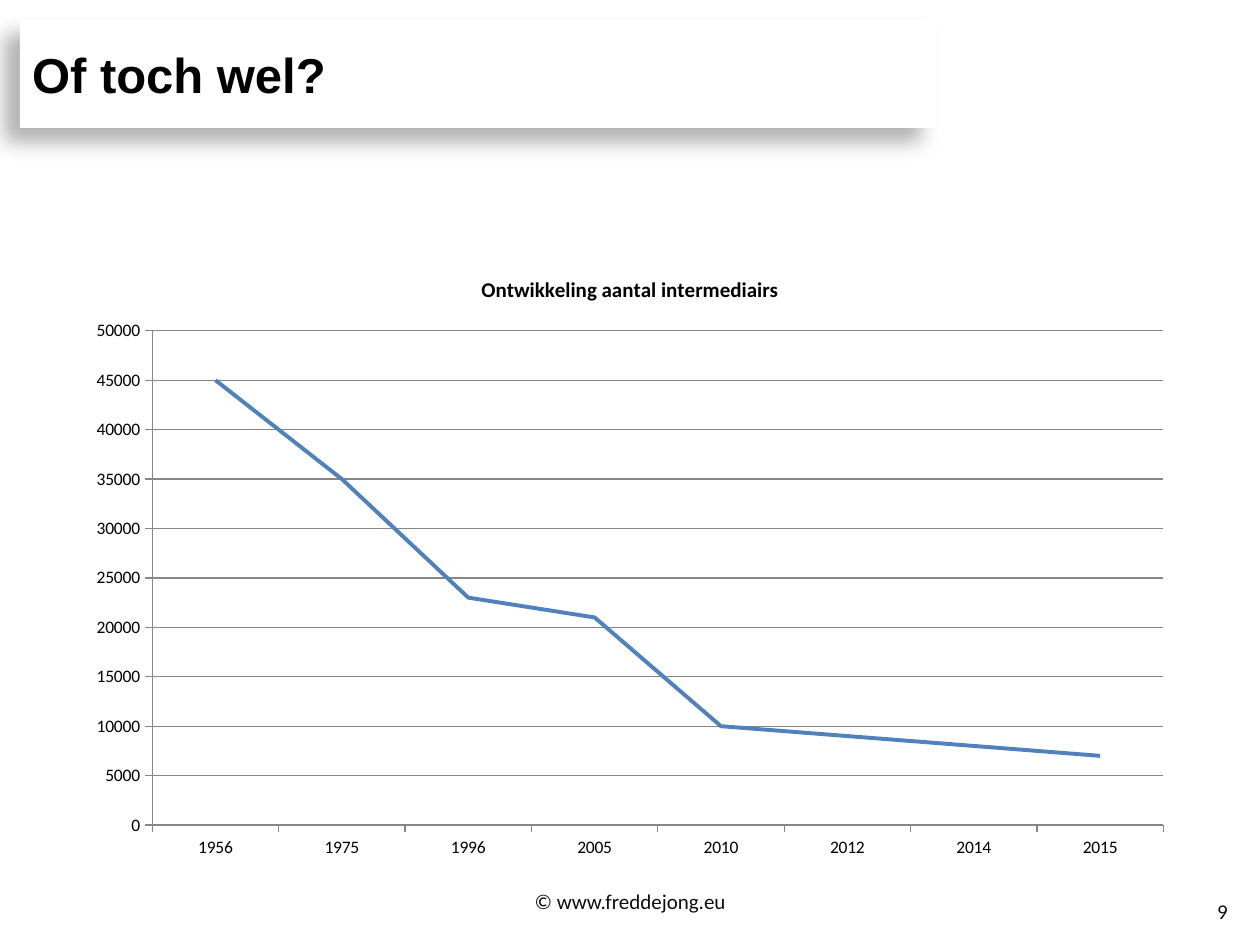
from lxml.etree import SubElement
from pptx import Presentation
from pptx.chart.data import CategoryChartData
from pptx.dml.color import RGBColor
from pptx.enum.chart import XL_CHART_TYPE as ChartType, XL_MARKER_STYLE as Marker, XL_TICK_MARK as Tick
from pptx.enum.shapes import MSO_SHAPE as Shape
from pptx.enum.text import MSO_ANCHOR as Anchor, PP_ALIGN as Align
from pptx.oxml.ns import qn
from pptx.util import Cm, Pt


def color(hex_code):
    return RGBColor.from_string(hex_code)


class SlideBuilder:
    heading_font = "Arial"
    body_font = "Calibri"
    black = "000000"
    white = "FFFFFF"
    footer_color = "0D0D0D"
    line_color = "4F81BD"
    grid_color = "868686"

    def __init__(self, slide):
        self.slide = slide

    def style(self, font, name, size, hex_code, bold=False):
        font.name = name
        font.size = Pt(size)
        font.bold = bold
        font.color.rgb = color(hex_code)

    def set_text(self, frame, text, align, name, size, hex_code, bold=False):
        frame.word_wrap = True
        frame.vertical_anchor = Anchor.MIDDLE
        frame.text = text
        paragraph = frame.paragraphs[0]
        paragraph.alignment = align
        self.style(paragraph.runs[0].font, name, size, hex_code, bold)

    def add_shadow(self, shape):
        shape.shadow.inherit = False
        effects = shape._element.spPr.find(qn("a:effectLst"))
        shadow = SubElement(effects, qn("a:outerShdw"), blurRad=str(Pt(12)),
                            dist=str(Pt(12)), dir=str(140 * 60000),
                            algn="ctr", rotWithShape="0")
        tint = SubElement(shadow, qn("a:srgbClr"), val=self.black)
        SubElement(tint, qn("a:alpha"), val="30000")

    def heading(self, text, left, top, width, height):
        banner = self.slide.shapes.add_shape(
            Shape.RECTANGLE, Cm(left), Cm(top), Cm(width), Cm(height))
        banner.fill.solid()
        banner.fill.fore_color.rgb = color(self.white)
        banner.line.fill.background()
        self.add_shadow(banner)
        self.set_text(banner.text_frame, text, Align.LEFT,
                      self.heading_font, 28, self.black, True)

    def footer(self, text, align, left, top, width, height):
        box = self.slide.shapes.add_textbox(Cm(left), Cm(top), Cm(width), Cm(height))
        self.set_text(box.text_frame, text, align, self.body_font, 12, self.footer_color)

    def line_chart(self, title, counts, left, top, width, height):
        data = CategoryChartData(number_format="General")
        data.categories = list(counts)
        data.add_series(title, list(counts.values()))
        chart = self.slide.shapes.add_chart(
            ChartType.LINE, Cm(left), Cm(top), Cm(width), Cm(height), data).chart
        self.style(chart.font, self.body_font, 10, self.black)
        chart.has_legend = False
        chart.has_title = True
        chart.chart_title.include_in_layout = False
        heading = chart.chart_title.text_frame
        heading.text = title
        self.style(heading.paragraphs[0].runs[0].font, self.body_font, 12, self.black, True)

        years, amounts = chart.category_axis, chart.value_axis
        years.has_major_gridlines = False
        amounts.has_major_gridlines = True
        amounts.minimum_scale = 0
        amounts.maximum_scale = 50000
        amounts.major_unit = 5000
        for axis in (years, amounts):
            axis.major_tick_mark = Tick.OUTSIDE
            axis.minor_tick_mark = Tick.NONE
        for part in (years, amounts, amounts.major_gridlines):
            part.format.line.color.rgb = color(self.grid_color)
            part.format.line.width = Pt(0.75)

        chart.plots[0].vary_by_categories = False
        trend = chart.plots[0].series[0]
        trend.smooth = False
        trend.marker.style = Marker.NONE
        trend.format.line.color.rgb = color(self.line_color)
        trend.format.line.width = Pt(2.25)


def main():
    deck = Presentation()
    deck.slide_width = Cm(25.4)
    deck.slide_height = Cm(19.05)
    builder = SlideBuilder(deck.slides.add_slide(deck.slide_layouts[6]))
    intermediaries = {
        "1956": 45000, "1975": 35000, "1996": 23000, "2005": 21000,
        "2010": 10000, "2012": 9000, "2014": 8000, "2015": 7000,
    }
    builder.heading("Of toch wel?", 0.4, 0.4, 18.47, 2.18)
    builder.footer("9", Align.RIGHT, 19.08, 17.86, 5.92, 1.02)
    builder.footer("© www.freddejong.eu", Align.CENTER, 8.68, 17.65, 8.05, 1.02)
    builder.line_chart("Ontwikkeling aantal intermediairs", intermediaries,
                       1.5, 5.08, 22.4, 12.45)
    deck.save("out.pptx")


if __name__ == "__main__":
    main()
